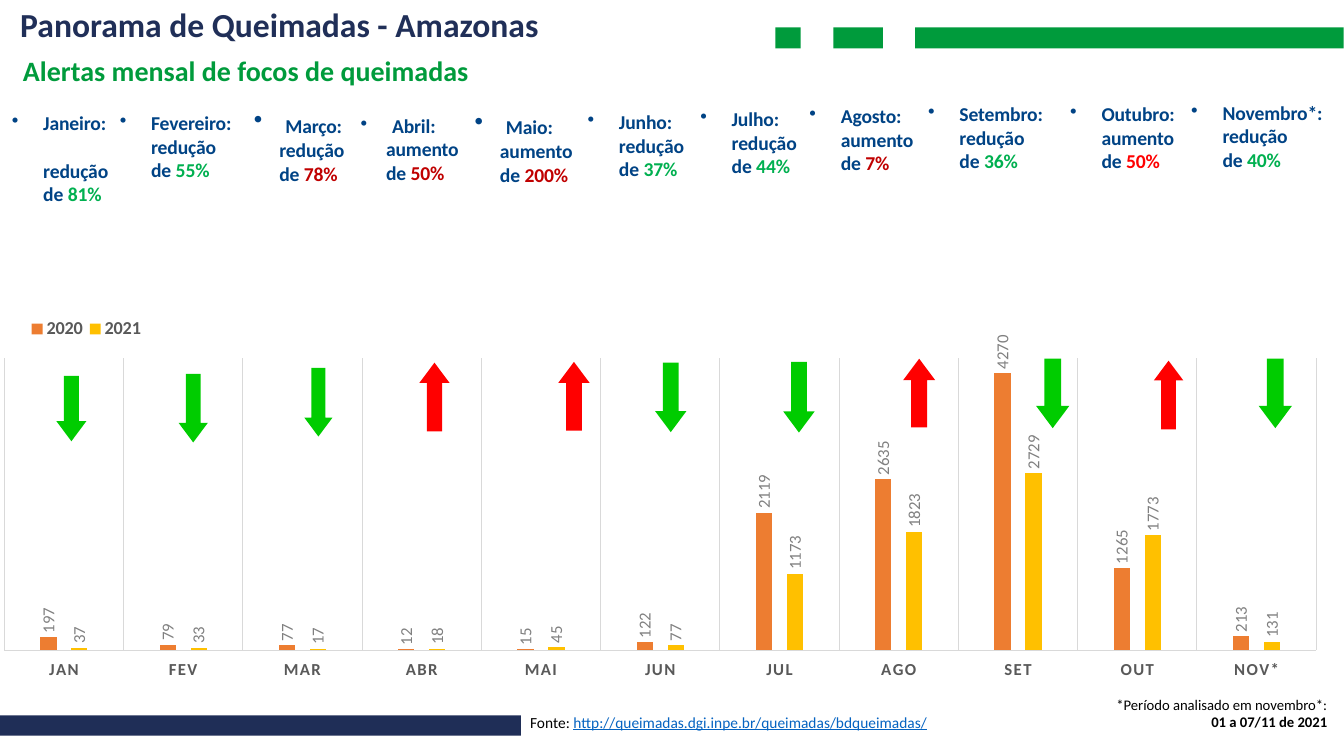
from dataclasses import dataclass

from lxml.etree import SubElement
from pptx import Presentation
from pptx.chart.data import CategoryChartData
from pptx.dml.color import RGBColor
from pptx.enum.chart import XL_CHART_TYPE, XL_LABEL_POSITION, XL_LEGEND_POSITION, XL_TICK_LABEL_POSITION, XL_TICK_MARK
from pptx.enum.shapes import MSO_SHAPE
from pptx.enum.text import MSO_ANCHOR, PP_ALIGN
from pptx.oxml import parse_xml
from pptx.oxml.ns import nsdecls, qn
from pptx.util import Cm, Pt

FONT = "Calibri"
COLORS = {
    "green": "009B3C", "navy": "1F2E57", "title": "202F58", "label": "004385",
    "fall": "00B050", "rise": "C00000", "alert": "FF0000", "down": "00CC00",
    "black": "000000", "link": "0563C1", "grid": "D9D9D9", "axis": "595959",
    "value": "808080", "2020": "ED7D31", "2021": "FFC000",
}


@dataclass(frozen=True)
class Box:
    left: float
    top: float
    width: float
    height: float

    def lengths(self) -> tuple:
        return Cm(self.left), Cm(self.top), Cm(self.width), Cm(self.height)


@dataclass(frozen=True)
class Month:
    name: str
    change: str
    percent: str
    color: str
    text_box: Box
    arrow_box: Box
    tab_size: int = 0
    gap: float = 0


@dataclass(frozen=True)
class Bar:
    box: Box
    color: str


MONTHS = [
    Month("Janeiro:", "redução", "81%", "fall", Box(0.25, 2.77, 2.54, 1.83), Box(1.42, 9.47, 0.76, 1.65), gap=17),
    Month("Fevereiro:", "redução", "55%", "fall", Box(2.97, 2.77, 3.02, 1.83), Box(4.5, 9.42, 0.74, 1.73)),
    Month("Março:", "redução", "78%", "rise", Box(6.35, 2.69, 2.84, 2), Box(7.67, 9.27, 0.71, 1.73), 18),
    Month("Abril:", "aumento", "50%", "rise", Box(9.04, 2.84, 3.05, 1.83), Box(10.57, 9.14, 0.76, 1.73), 14),
    Month("Maio:", "aumento", "200%", "rise", Box(11.91, 2.72, 3.1, 2), Box(14.07, 9.12, 0.79, 1.73), 18),
    Month("Junho:", "redução", "37%", "fall", Box(14.76, 2.74, 3.02, 1.83), Box(16.51, 9.14, 0.79, 1.75)),
    Month("Julho:", "redução", "44%", "fall", Box(17.6, 2.67, 3, 1.83), Box(19.74, 9.12, 0.79, 1.78)),
    Month("Agosto:", "aumento", "7%", "rise", Box(20.35, 2.59, 3.23, 1.83), Box(22.76, 9.04, 0.81, 1.73)),
    Month("Setembro:", "redução", "36%", "fall", Box(23.34, 2.54, 3, 1.83), Box(26.11, 9.04, 0.84, 1.75)),
    Month("Outubro:", "aumento", "50%", "alert", Box(26.92, 2.54, 3.02, 1.83), Box(29.08, 9.09, 0.74, 1.73)),
    Month("Novembro*:", "redução", "40%", "fall", Box(29.97, 2.51, 3.51, 1.83), Box(31.72, 9.04, 0.84, 1.75)),
]
BARS = [
    Bar(Box(23.06, 0.69, 10.8, 0.53), "green"),
    Bar(Box(21, 0.69, 1.25, 0.53), "green"),
    Bar(Box(19.54, 0.69, 0.64, 0.53), "green"),
    Bar(Box(0, 18.03, 13.13, 0.51), "navy"),
]
CATEGORIES = ["JAN", "FEV", "MAR", "ABR", "MAI", "JUN", "JUL", "AGO", "SET", "OUT", "NOV*"]
ALERTS = {
    "2020": [197, 79, 77, 12, 15, 122, 2119, 2635, 4270, 1265, 213],
    "2021": [37, 33, 17, 18, 45, 77, 1173, 1823, 2729, 1773, 131],
}


def rgb(name: str) -> RGBColor:
    return RGBColor.from_string(COLORS[name])


def style_font(font, size: float, color: str, bold: bool = False) -> None:
    font.name, font.size, font.bold = FONT, Pt(size), bold
    font.color.rgb = rgb(color)


def add_solid(slide, kind, box: Box, color: str):
    shape = slide.shapes.add_shape(kind, *box.lengths())
    shape.shadow.inherit = False
    shape.fill.solid()
    shape.fill.fore_color.rgb = rgb(color)
    shape.line.fill.background()
    return shape


def add_frame(slide, box: Box):
    frame = slide.shapes.add_textbox(*box.lengths()).text_frame
    frame.word_wrap = True
    frame.margin_left = frame.margin_right = frame.margin_bottom = 0
    frame.margin_top = Cm(0.03)
    return frame


def add_line(frame, text: str, size: float, color: str, bold: bool = False):
    paragraph = frame.paragraphs[0]
    if paragraph.runs:
        paragraph = frame.add_paragraph()
    style_font(paragraph.font, size, color, bold)
    paragraph.add_run().text = text
    return paragraph


def add_alert(slide, month: Month) -> None:
    frame = add_frame(slide, month.text_box)
    indent = Cm(0.69 if month.tab_size else 0.84)
    heading = add_line(frame, "\t" if month.tab_size else month.name, 14, "label", True)
    if month.tab_size:
        heading.runs[0].font.size = Pt(month.tab_size)
        heading.add_run().text = month.name
    properties = heading._p.get_or_add_pPr()
    properties.set("indent", str(-Cm(0.64 if month.tab_size else 0.79)))
    bullet = parse_xml(f'<a:buChar {nsdecls("a")} char="•"/>')
    tabs = parse_xml(f'<a:tabLst {nsdecls("a")}><a:tab pos="{Cm(0.84)}" algn="l"/></a:tabLst>')
    properties.insert(0, bullet)
    properties.insert(1, tabs)

    detail = add_line(frame, month.change, 14, "label", True)
    detail.space_before = Pt(month.gap)
    detail.add_line_break()
    detail.add_run().text = "de "
    percent = detail.add_run()
    percent.text = month.percent
    percent.font.color.rgb = rgb(month.color)
    for paragraph in frame.paragraphs:
        paragraph._p.get_or_add_pPr().set("marL", str(indent))
        for run in paragraph.runs:
            run._r.get_or_add_rPr().set("spc", "-10")


def add_arrow(slide, month: Month) -> None:
    rising = month.change == "aumento"
    kind = MSO_SHAPE.UP_ARROW if rising else MSO_SHAPE.DOWN_ARROW
    arrow = add_solid(slide, kind, month.arrow_box, "alert" if rising else "down")
    arrow.adjustments[0], arrow.adjustments[1] = 0.5, 0.67


def place(element, index: int, x: float, y: float, w: float, h: float, inner: bool = False) -> None:
    for old in element.findall(qn("c:layout")):
        element.remove(old)
    layout = element.makeelement(qn("c:layout"))
    element.insert(index, layout)
    manual = SubElement(layout, qn("c:manualLayout"))
    settings = [("layoutTarget", "inner")] if inner else []
    settings += [("xMode", "edge"), ("yMode", "edge"), ("x", x), ("y", y), ("w", w), ("h", h)]
    for tag, value in settings:
        SubElement(manual, qn(f"c:{tag}")).set("val", str(value))


def add_alert_chart(slide) -> None:
    data = CategoryChartData()
    data.categories = CATEGORIES
    for year, values in ALERTS.items():
        data.add_series(year, values)
    box = Box(-0.58, 7.92, 34.44, 9.25)
    chart = slide.shapes.add_chart(XL_CHART_TYPE.COLUMN_CLUSTERED, *box.lengths(), data).chart
    style_font(chart.font, 10, "black")
    chart.has_title = False
    chart.has_legend = True
    chart.legend.position = XL_LEGEND_POSITION.TOP
    chart.legend.include_in_layout = False
    style_font(chart.legend.font, 13, "axis", True)
    place(chart.legend._element, 1, 0.035, 0.0, 0.09, 0.08)
    place(chart._chartSpace.chart.plotArea, 0, 0.02, 0.12, 0.96, 0.795, inner=True)

    value_axis = chart.value_axis
    value_axis.minimum_scale, value_axis.maximum_scale = 0, 4500
    value_axis.has_major_gridlines = False
    value_axis.visible = False
    axis = chart.category_axis
    axis.major_tick_mark = XL_TICK_MARK.NONE
    axis.tick_label_position = XL_TICK_LABEL_POSITION.LOW
    axis.has_major_gridlines = True
    for line in (axis.format.line, axis.major_gridlines.format.line):
        line.color.rgb = rgb("grid")
        line.width = Pt(0.75)
    style_font(axis.tick_labels.font, 12, "axis", True)
    axis._element.find(f".//{qn('a:defRPr')}").set("spc", "100")

    plot = chart.plots[0]
    plot.gap_width, plot.overlap, plot.vary_by_categories = 444, -90, False
    for series in plot.series:
        series.format.fill.solid()
        series.format.fill.fore_color.rgb = rgb(series.name)
        labels = series.data_labels
        labels.show_value = True
        labels.position = XL_LABEL_POSITION.OUTSIDE_END
        style_font(labels.font, 12, "value")
        body = labels._element.find(f".//{qn('a:bodyPr')}")
        body.set("rot", "-5400000")
        body.set("vert", "horz")


def main() -> None:
    presentation = Presentation()
    presentation.slide_width, presentation.slide_height = Cm(33.87), Cm(19.05)
    slide = presentation.slides.add_slide(presentation.slide_layouts[6])
    for bar in BARS:
        add_solid(slide, MSO_SHAPE.RECTANGLE, bar.box, bar.color)

    title = add_frame(slide, Box(0.51, -0.05, 14.5, 1.27))
    title.vertical_anchor = MSO_ANCHOR.MIDDLE
    add_line(title, "Panorama de Queimadas - Amazonas", 24, "title", True)
    subtitle = add_frame(slide, Box(0.58, 1.32, 12, 0.91))
    add_line(subtitle, "Alertas mensal de focos de queimadas", 20, "green", True)

    add_alert_chart(slide)
    for month in MONTHS:
        add_alert(slide, month)
        add_arrow(slide, month)

    source = add_line(add_frame(slide, Box(13.36, 17.93, 10.06, 0.53)), "Fonte: ", 11, "black")
    address = source.add_run()
    address.text = "http://queimadas.dgi.inpe.br/queimadas/bdqueimadas/"
    address.font.underline = True
    address.font.color.rgb = rgb("link")
    period = add_frame(slide, Box(27.61, 17.5, 5.84, 0.94))
    add_line(period, "*Período analisado em novembro*:", 10.5, "black")
    add_line(period, "01 a 07/11 de 2021", 10.5, "black", True)
    for paragraph in period.paragraphs:
        paragraph.alignment = PP_ALIGN.RIGHT
    presentation.save("out.pptx")


if __name__ == "__main__":
    main()
